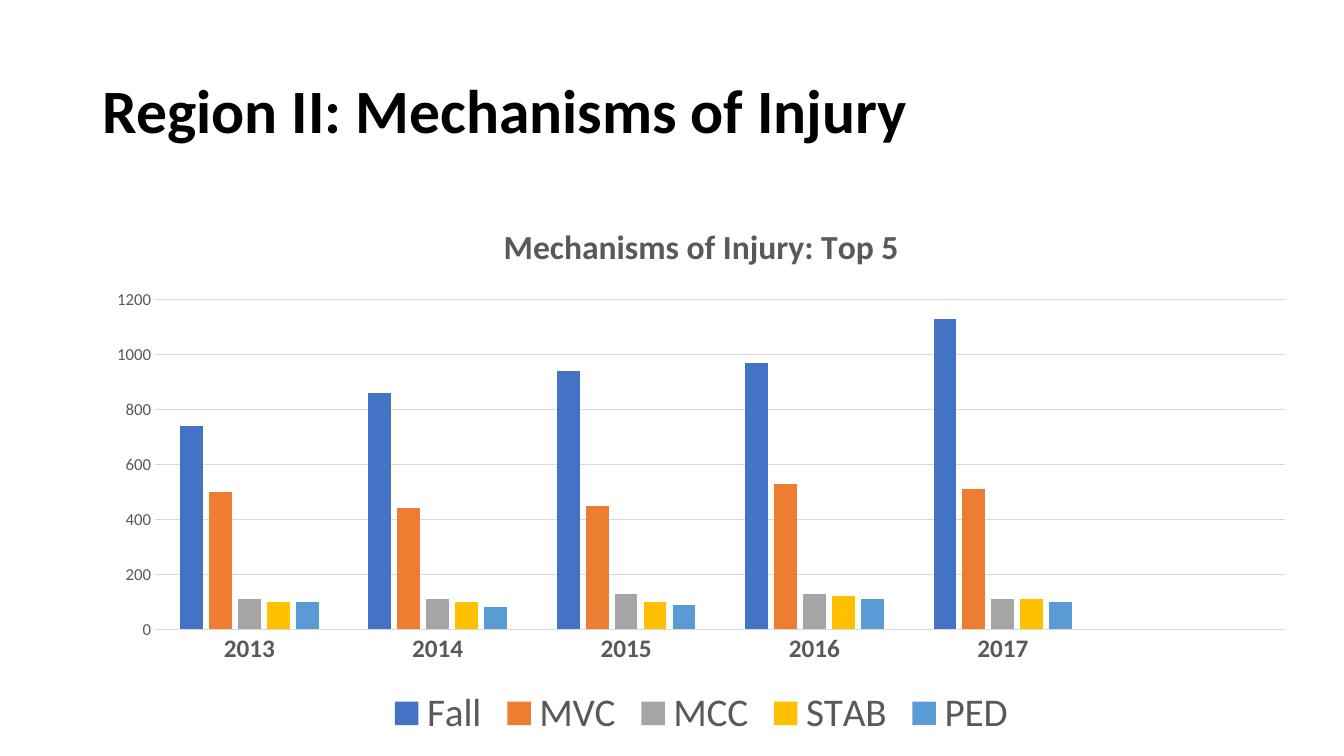
"""Build a slide charting the top five mechanisms of injury in Region II."""
from dataclasses import dataclass

from pptx import Presentation
from pptx.chart.data import CategoryChartData
from pptx.dml.color import RGBColor
from pptx.enum.chart import XL_CHART_TYPE, XL_LEGEND_POSITION, XL_TICK_MARK
from pptx.enum.text import MSO_ANCHOR, PP_ALIGN
from pptx.util import Inches, Pt


@dataclass(frozen=True)
class Theme:
    face: str = "Calibri"
    ink: str = "000000"
    grey: str = "595959"
    rule: str = "D9D9D9"
    bars: tuple = ("4472C4", "ED7D31", "A5A5A5", "FFC000", "5B9BD5")
    head: int = 44
    title: int = 24
    years: int = 18
    scale: int = 12
    key: int = 28


YEARS = ["2013", "2014", "2015", "2016", "2017", ""]
CASES = {
    "Fall": [740, 860, 940, 970, 1130, None],
    "MVC": [500, 440, 450, 530, 510, None],
    "MCC": [110, 110, 130, 130, 110, None],
    "STAB": [100, 100, 100, 120, 110, None],
    "PED": [100, 80, 90, 110, 100, None],
}


def style(font, face, size, color, bold=False):
    font.name, font.size, font.bold = face, Pt(size), bold
    font.color.rgb = RGBColor.from_string(color)


def write(frame, text, align=None, spacing=None, **form):
    frame.text = text
    line = frame.paragraphs[0]
    line.alignment, line.line_spacing = align, spacing
    style(line.runs[0].font, **form)


class Board:
    def __init__(self, slide, theme):
        self.slide, self.theme = slide, theme

    def title(self, text, left, top, width, height):
        box = self.slide.shapes.title
        box.left, box.top = Inches(left), Inches(top)
        box.width, box.height = Inches(width), Inches(height)
        box.text_frame.vertical_anchor = MSO_ANCHOR.MIDDLE
        write(box.text_frame, text, align=PP_ALIGN.LEFT, spacing=0.9,
              face=self.theme.face, size=self.theme.head,
              color=self.theme.ink, bold=True)

    def axis(self, axis, size, bold=False):
        axis.major_tick_mark = axis.minor_tick_mark = XL_TICK_MARK.NONE
        style(axis.tick_labels.font, self.theme.face, size, self.theme.grey, bold)

    def rule(self, line):
        line.color.rgb = RGBColor.from_string(self.theme.rule)
        line.width = Pt(0.75)

    def chart(self, text, cats, rows, left, top, width, height):
        theme = self.theme
        data = CategoryChartData()
        data.categories = cats
        for name, vals in rows.items():
            data.add_series(name, vals)
        chart = self.slide.shapes.add_chart(
            XL_CHART_TYPE.COLUMN_CLUSTERED, Inches(left), Inches(top),
            Inches(width), Inches(height), data).chart
        style(chart.font, theme.face, 10, theme.ink)
        write(chart.chart_title.text_frame, text, face=theme.face,
              size=theme.title, color=theme.grey, bold=True)
        chart.chart_title.include_in_layout = False

        self.axis(chart.category_axis, theme.years, bold=True)
        self.rule(chart.category_axis.format.line)
        scale = chart.value_axis
        self.axis(scale, theme.scale)
        scale.minimum_scale, scale.maximum_scale, scale.major_unit = 0, 1200, 200
        scale.format.line.fill.background()
        self.rule(scale.major_gridlines.format.line)

        chart.has_legend = True
        chart.legend.position = XL_LEGEND_POSITION.BOTTOM
        chart.legend.include_in_layout = False
        style(chart.legend.font, theme.face, theme.key, theme.grey)

        plot = chart.plots[0]
        plot.gap_width, plot.overlap, plot.vary_by_categories = 219, -27, False
        for bar, color in zip(plot.series, theme.bars):
            bar.format.fill.solid()
            bar.format.fill.fore_color.rgb = RGBColor.from_string(color)


def main():
    deck = Presentation()
    deck.slide_width, deck.slide_height = Inches(13.33), Inches(7.5)
    board = Board(deck.slides.add_slide(deck.slide_layouts[5]), Theme())
    board.title("Region II: Mechanisms of Injury", 0.92, 0.4, 11.5, 1.45)
    board.chart("Mechanisms of Injury: Top 5", YEARS, CASES, 0.92, 2, 12.07, 5.39)
    deck.save("out.pptx")


if __name__ == "__main__":
    main()
